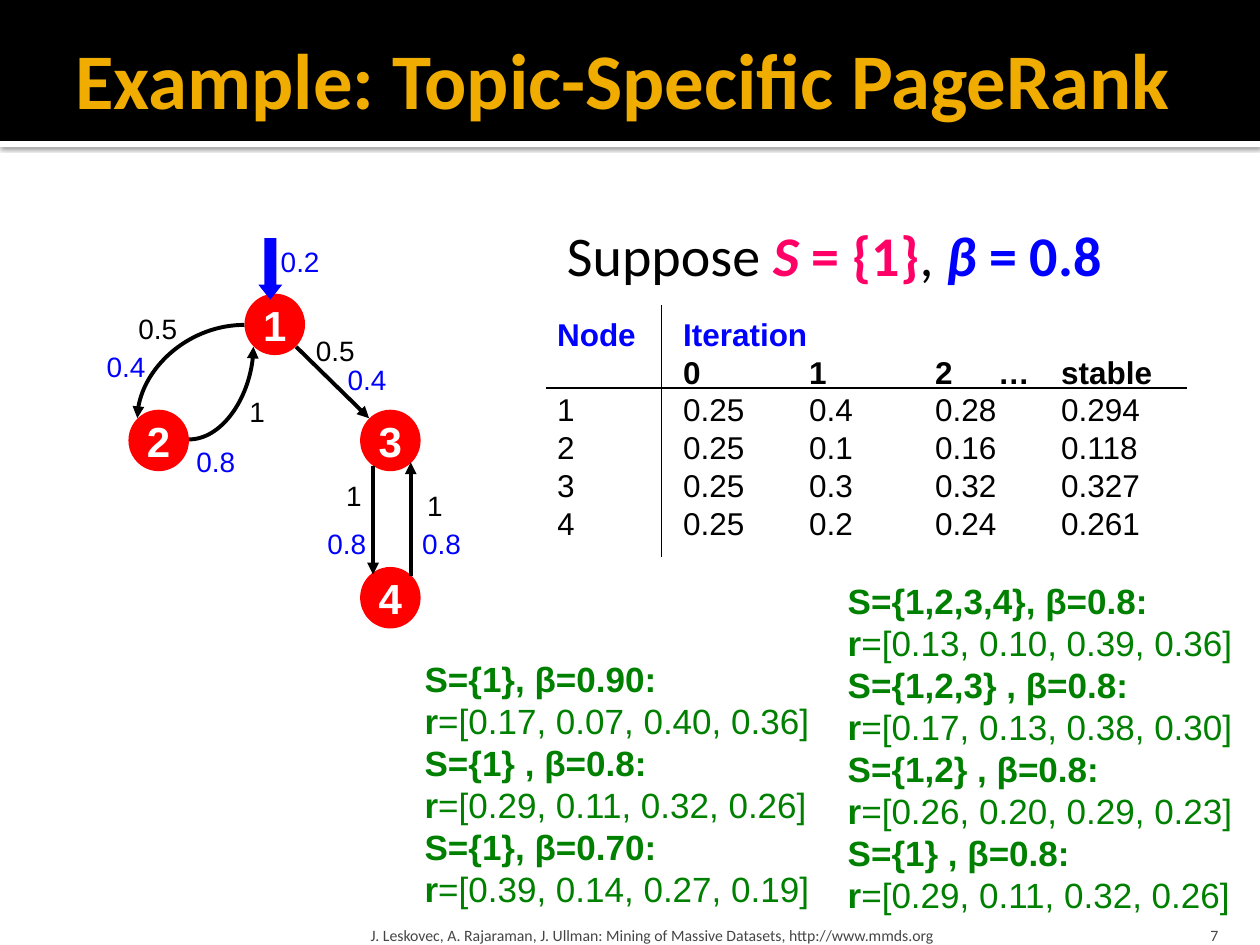
from lxml.etree import SubElement
from pptx import Presentation
from pptx.dml.color import RGBColor
from pptx.enum.shapes import MSO_CONNECTOR, MSO_SHAPE
from pptx.enum.text import MSO_ANCHOR, MSO_AUTO_SIZE, PP_ALIGN
from pptx.oxml.ns import qn
from pptx.util import Cm, Pt

BLACK, WHITE, BLUE, RED = "000000", "FFFFFF", "0000FF", "FF0000"
GOLD, PINK, GREEN, GREY = "F0AD00", "FF0066", "008000", "454545"

# Content; positions in cm
TITLE = "Example: Topic-Specific PageRank"
CREDIT = ("J. Leskovec, A. Rajaraman, J. Ullman: Mining of Massive Datasets, "
          "http://www.mmds.org")
PAGE_NUMBER = "7"

NODES = {"1": (4.93, 5.92), "2": (2.59, 8.26), "3": (7.26, 8.26), "4": (7.26, 11.43)}
CURVED_EDGES = [(4.93, 6.55, 2.77, 8.43), (3.81, 8.86, 5.11, 6.99)]
STRAIGHT_EDGES = [(5.97, 6.99, 7.44, 8.43), (7.52, 9.4, 7.52, 11.58),
                  (8.28, 11.61, 8.28, 9.32)]
EDGE_LABELS = {
    BLACK: [("0.5", 6.12, 6.6), ("0.5", 2.54, 6.15), ("1", 4.78, 7.82),
            ("1", 6.73, 9.53), ("1", 8.36, 9.73)],
    BLUE: [("0.2", 5.41, 4.8), ("0.4", 1.9, 6.93), ("0.4", 6.76, 7.19),
           ("0.8", 3.71, 8.84), ("0.8", 6.35, 10.49), ("0.8", 8.26, 10.49)],
}

# text, colour, bold, italic
ASSUMPTION = [("Suppose ", BLACK, False, False), ("S", PINK, True, True),
              (" = {1}", PINK, True, False), (", ", BLACK, False, False),
              ("β ", BLUE, True, True), ("= 0.8", BLUE, True, False)]

ITERATIONS = [
    ("Node", "Iteration", "", "", "", ""),
    ("", "0", "1", "2", "…", "stable"),
    ("1", "0.25", "0.4", "0.28", "", "0.294"),
    ("2", "0.25", "0.1", "0.16", "", "0.118"),
    ("3", "0.25", "0.3", "0.32", "", "0.327"),
    ("4", "0.25", "0.2", "0.24", "", "0.261"),
]
COLUMN_WIDTHS = (2.54, 2.54, 2.54, 1.27, 1.27, 2.54)
ROW_HEIGHT = 0.76
TABLE_RULES = [(11, 7.82, 23.93, 7.82), (13.34, 6.15, 13.34, 11.23)]

# (left, top), then (teleport set and beta, ranks)
RESULTS = [
    ((16.84, 11.56), [("S={1,2,3,4}, β=0.8:", "0.13, 0.10, 0.39, 0.36"),
                      ("S={1,2,3} , β=0.8:", "0.17, 0.13, 0.38, 0.30"),
                      ("S={1,2} , β=0.8:", "0.26, 0.20, 0.29, 0.23"),
                      ("S={1} , β=0.8:", "0.29, 0.11, 0.32, 0.26")]),
    ((8.31, 13.13), [("S={1}, β=0.90:", "0.17, 0.07, 0.40, 0.36"),
                     ("S={1} , β=0.8:", "0.29, 0.11, 0.32, 0.26"),
                     ("S={1}, β=0.70:", "0.39, 0.14, 0.27, 0.19")]),
]


def rgb(colour):
    return RGBColor.from_string(colour)


def style(font, size, colour, bold=False, name="Arial"):
    font.name, font.size, font.bold = name, Pt(size), bold
    font.color.rgb = rgb(colour)


def add_block(kind, left, top, width, height, colour):
    block = slide.shapes.add_shape(kind, Cm(left), Cm(top), Cm(width), Cm(height))
    block.shadow.inherit = False
    block.fill.solid()
    block.fill.fore_color.rgb = rgb(colour)
    block.line.fill.background()
    return block


def add_text(left, top, width, height, wrap=False):
    box = slide.shapes.add_textbox(Cm(left), Cm(top), Cm(width), Cm(height))
    box.text_frame.word_wrap = wrap
    return box.text_frame


def add_line(ends, width, kind=MSO_CONNECTOR.STRAIGHT, arrow=False):
    line = slide.shapes.add_connector(kind, *map(Cm, ends))
    line.line.color.rgb = rgb(BLACK)
    line.line.width = Pt(width)
    properties = line.element.spPr
    if arrow:
        SubElement(properties.find(qn("a:ln")), qn("a:tailEnd"), type="triangle")
    SubElement(properties, qn("a:effectLst"))
    return properties


def add_footer(text, left, width, align, side_margin):
    frame = add_text(left, 18.29, width, 0.76, wrap=True)
    frame.vertical_anchor = MSO_ANCHOR.BOTTOM
    frame.margin_left = frame.margin_right = Cm(side_margin)
    frame.margin_bottom = 0
    frame.text = text
    frame.paragraphs[0].alignment = align
    style(frame.paragraphs[0].font, 9, GREY, name="Calibri")


prs = Presentation()
prs.slide_width, prs.slide_height = Cm(25.4), Cm(19.05)
slide = prs.slides.add_slide(prs.slide_layouts[5])

# Header band with a shadowed white edge
edge = add_block(MSO_SHAPE.RECTANGLE, 0, 2.84, 25.4, 0.13, WHITE)
shadow = SubElement(edge.element.spPr.find(qn("a:effectLst")), qn("a:outerShdw"),
                    blurRad=str(Pt(2.5)), dist=str(Pt(0.8)), dir="5400000",
                    algn="t", rotWithShape="0")
shade = SubElement(shadow, qn("a:srgbClr"), val=BLACK)
SubElement(shade, qn("a:alpha"), val="60000")
add_block(MSO_SHAPE.RECTANGLE, 0, 0, 25.4, 2.84, BLACK)

# Title, brought in front of the band
title = slide.shapes.title
title.left, title.top, title.width, title.height = map(Cm, (1.27, 0.2, 24.13, 2.74))
title.element.getparent().append(title.element)
title.text_frame.text = TITLE
title.text_frame.auto_size = MSO_AUTO_SIZE.NONE
title.text_frame.vertical_anchor = MSO_ANCHOR.MIDDLE
title.text_frame.margin_right = Cm(0.13)
title.text_frame.paragraphs[0].alignment = PP_ALIGN.LEFT
style(title.text_frame.paragraphs[0].font, 45, GOLD, True, "Calibri")

# Graph
for number, (left, top) in NODES.items():
    node = add_block(MSO_SHAPE.OVAL, left, top, 1.22, 1.24, RED)
    node.text_frame.text = number
    node.text_frame.word_wrap = False
    node.text_frame.vertical_anchor = MSO_ANCHOR.MIDDLE
    node.text_frame.paragraphs[0].alignment = PP_ALIGN.CENTER
    style(node.text_frame.paragraphs[0].font, 24, WHITE, True)
for ends in CURVED_EDGES:
    curve = add_line(ends, 2.25, MSO_CONNECTOR.CURVE, arrow=True)
    curve.find(qn("a:prstGeom")).set("prst", "curvedConnector2")
for ends in STRAIGHT_EDGES:
    add_line(ends, 2.25, arrow=True)
teleport = add_block(MSO_SHAPE.DOWN_ARROW, 5.21, 4.8, 0.48, 1.24, BLUE)
teleport.adjustments[0], teleport.adjustments[1] = 0.5, 0.625
for colour, labels in EDGE_LABELS.items():
    for weight, left, top in labels:
        frame = add_text(left, top, 1.3 if len(weight) > 1 else 0.84, 0.94)
        frame.text = weight
        style(frame.paragraphs[0].font, 16, colour)

# Assumption
assumption = add_text(11.18, 4.32, 11.33, 1.63).paragraphs[0]
for text, colour, bold, italic in ASSUMPTION:
    run = assumption.add_run()
    run.text = text
    style(run.font, 32, colour, bold, "Calibri")
    run.font.italic = italic

# Iteration table
table = slide.shapes.add_table(
    len(ITERATIONS), len(COLUMN_WIDTHS), Cm(11.23), Cm(6.35),
    Cm(sum(COLUMN_WIDTHS)), Cm(ROW_HEIGHT * len(ITERATIONS))).table
table.first_row = table.horz_banding = False
for column, width in zip(table.columns, COLUMN_WIDTHS):
    column.width = Cm(width)
for r, values in enumerate(ITERATIONS):
    table.rows[r].height = Cm(ROW_HEIGHT)
    for c, value in enumerate(values):
        cell = table.cell(r, c)
        cell.fill.background()
        cell.margin_left = cell.margin_right = cell.margin_top = cell.margin_bottom = 0
        cell.vertical_anchor = MSO_ANCHOR.BOTTOM
        cell.text = value
        style(cell.text_frame.paragraphs[0].font, 18, BLACK if r else BLUE, r < 2)
table.cell(0, 1).merge(table.cell(0, len(COLUMN_WIDTHS) - 1))
for ends in TABLE_RULES:
    add_line(ends, 0.75)

# Ranks for other teleport sets and betas
for (left, top), cases in RESULTS:
    frame = add_text(left, top, 8.31, 0.25 + 1.71 * len(cases))
    for i, (setting, ranks) in enumerate(cases):
        heading = frame.add_paragraph() if i else frame.paragraphs[0]
        vector = frame.add_paragraph()
        heading.text = setting
        vector.add_run().text = "r"
        vector.add_run().text = f"=[{ranks}]"
        style(heading.font, 20, GREEN, True)
        style(vector.font, 20, GREEN)
        vector.runs[0].font.bold = True
        heading.line_spacing = vector.line_spacing = Pt(24)

# Footer
add_footer(PAGE_NUMBER, 22.78, 2.03, PP_ALIGN.RIGHT, 0.25)
add_footer(CREDIT, 7.34, 15.29, PP_ALIGN.LEFT, 0.13)

prs.save("out.pptx")
